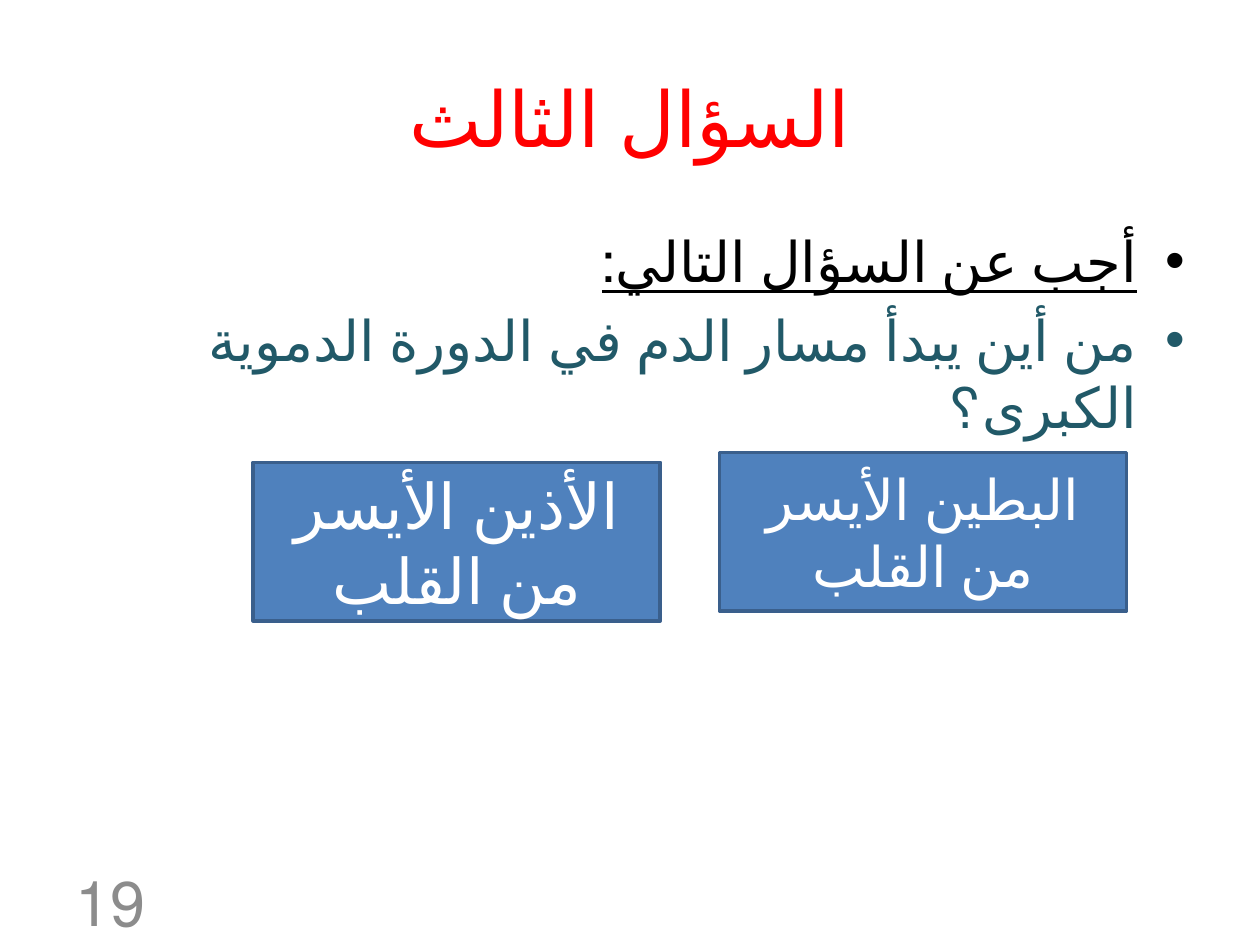
from lxml import etree
from pptx import Presentation
from pptx.dml.color import RGBColor
from pptx.enum.lang import MSO_LANGUAGE_ID
from pptx.enum.shapes import MSO_SHAPE
from pptx.enum.text import MSO_ANCHOR, PP_ALIGN
from pptx.oxml.ns import qn
from pptx.util import Pt

RECT = MSO_SHAPE.RECTANGLE
ARABIC = MSO_LANGUAGE_ID.ARABIC
TOP, MIDDLE = MSO_ANCHOR.TOP, MSO_ANCHOR.MIDDLE
LEFT, CENTER, RIGHT = PP_ALIGN.LEFT, PP_ALIGN.CENTER, PP_ALIGN.RIGHT

COLORS = {
    "title": "FF0000", "prompt": "000000", "question": "215968",
    "fill": "4F81BD", "edge": "3A5F8C", "answer": "FFFFFF", "number": "8C8C8C",
}
INDENT = 27


def color(name):
    return RGBColor.from_string(COLORS[name])


def apply(item, values):
    for key, value in values.items():
        setattr(item, key, value)


def write(par, text, size, tint, align, underline=None):
    """Fill one right-to-left paragraph."""
    par.alignment = align
    par._p.get_or_add_pPr().set("rtl", "1")
    run = par.add_run()
    run.text = text
    apply(run.font, {"name": "Calibri", "size": Pt(size),
                     "underline": underline, "language_id": ARABIC})
    run.font.color.rgb = color(tint)


def add_bullet(par):
    props = par._p.get_or_add_pPr()
    props.set("marR", str(Pt(INDENT)))
    props.set("marL", str(Pt(INDENT)))
    props.set("indent", str(Pt(-INDENT)))
    etree.SubElement(props, qn("a:buFont")).set("typeface", "Arial")
    etree.SubElement(props, qn("a:buChar")).set("char", "•")


def add_frame(slide, box, anchor):
    frame = slide.shapes.add_textbox(*map(Pt, box)).text_frame
    apply(frame, {"word_wrap": True, "vertical_anchor": anchor})
    return frame


def add_line(slide, box, text, size, tint, align):
    """A single line, centred vertically in its box."""
    frame = add_frame(slide, box, MIDDLE)
    write(frame.paragraphs[0], text, size, tint, align)


def add_body(slide, box, items):
    frame = add_frame(slide, box, TOP)
    for i, (text, tint, underline) in enumerate(items):
        par = frame.add_paragraph() if i else frame.paragraphs[0]
        par.space_before = Pt(6.4)
        write(par, text, 32, tint, RIGHT, underline)
        add_bullet(par)


def add_answer(slide, box, text, size):
    shape = slide.shapes.add_shape(RECT, *map(Pt, box))
    shape.shadow.inherit = False
    shape.fill.solid()
    shape.fill.fore_color.rgb = color("fill")
    shape.line.color.rgb = color("edge")
    shape.line.width = Pt(2)
    apply(shape.text_frame, {"word_wrap": True, "vertical_anchor": MIDDLE})
    write(shape.text_frame.paragraphs[0], text, size, "answer", CENTER)


def main():
    deck = Presentation()
    apply(deck, {"slide_width": Pt(720), "slide_height": Pt(540)})
    slide = deck.slides.add_slide(deck.slide_layouts[6])

    # Title and question
    add_line(slide, (36, 21.6, 648, 90), "السؤال الثالث", 44, "title", CENTER)
    add_body(slide, (36, 126, 648, 356.4), [
        ("أجب عن السؤال التالي:", "prompt", True),
        ("من أين يبدأ مسار الدم في الدورة الدموية الكبرى؟", "question", None),
    ])

    # Answer choices
    for x, y, text, size in [
        (411.2, 258.5, "البطين الأيسر من القلب", 32),
        (144.7, 264.2, "الأذين الأيسر من القلب", 36),
    ]:
        add_answer(slide, (x, y, 232.6, 90.7), text, size)

    # Slide number
    add_line(slide, (36, 500.5, 168, 28.8), "19", 36, "number", LEFT)
    deck.save("out.pptx")


if __name__ == "__main__":
    main()
